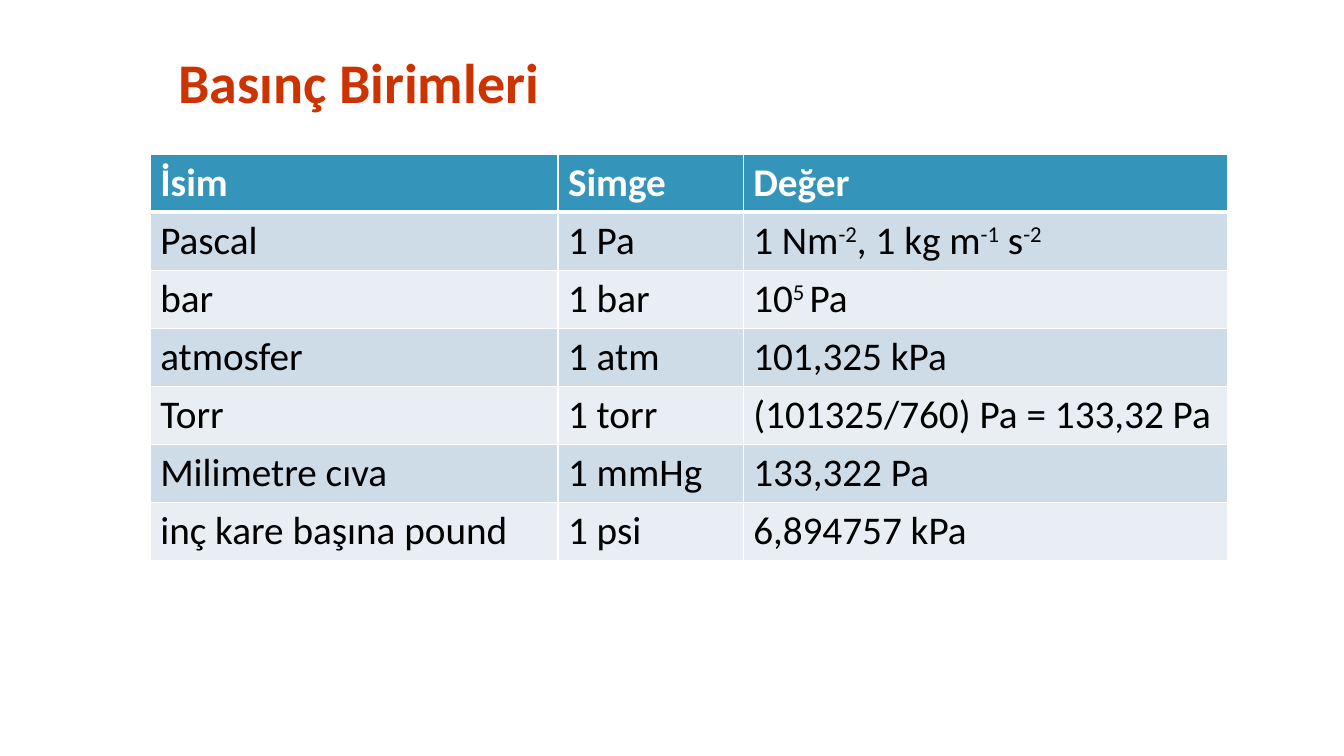
from pptx import Presentation
from pptx.dml.color import RGBColor
from pptx.enum import text
from pptx.oxml import parse_xml
from pptx.oxml.ns import nsdecls
from pptx.util import Pt

TITLE = "Basınç Birimleri"
# Pieces between bars are superscript.
ROWS = [
    ("İsim", "Simge", "Değer"),
    ("Pascal", "1 Pa", "1 Nm|-2|, 1 kg m|-1| s|-2"),
    ("bar", "1 bar", "10|5 |Pa"),
    ("atmosfer", "1 atm", "101,325 kPa"),
    ("Torr", "1 torr", "(101325/760) Pa = 133,32 Pa"),
    ("Milimetre cıva", "1 mmHg", "133,322 Pa"),
    ("inç kare başına pound", "1 psi", "6,894757 kPa"),
]
COL_WIDTHS = (291.3, 132.3, 346)
ROW_HEIGHT = 41.4
LEFT, TOP = 107.3, 110.2
HEADER, BANDS = "3494BA", ("E8EEF3", "CEDCE7")


def color(hex_value):
    return RGBColor.from_string(hex_value)


def style(p, size, hex_value, bold):
    p.font.name = "Calibri"
    p.font.size = Pt(size)
    p.font.bold = bold
    p.font.color.rgb = color(hex_value)


def add_border(cell, side, width):
    cell._tc.get_or_add_tcPr().append(parse_xml(
        f'<a:ln{side} {nsdecls("a")} w="{Pt(width)}"><a:solidFill>'
        f'<a:srgbClr val="FFFFFF"/></a:solidFill></a:ln{side}>'))


def fill_cell(cell, row, content):
    for side in "LRTB":
        under_header = (row, side) in ((0, "B"), (1, "T"))
        add_border(cell, side, 3 if under_header else 1)
    cell.fill.solid()
    cell.fill.fore_color.rgb = color(BANDS[row % 2] if row else HEADER)
    cell.vertical_anchor = text.MSO_ANCHOR.MIDDLE
    p = cell.text_frame.paragraphs[0]
    style(p, 28, "000000" if row else "FFFFFF", row == 0)
    for i, piece in enumerate(content.split("|")):
        r = p.add_run()
        r.text = piece
        if i % 2:
            r._r.get_or_add_rPr().set("baseline", "30000")


prs = Presentation()
prs.slide_width, prs.slide_height = Pt(960), Pt(540)
s = prs.slides.add_slide(prs.slide_layouts[6])

table = s.shapes.add_table(
    len(ROWS), len(COL_WIDTHS), Pt(LEFT), Pt(TOP),
    Pt(sum(COL_WIDTHS)), Pt(ROW_HEIGHT * len(ROWS))).table
for column, width in zip(table.columns, COL_WIDTHS):
    column.width = Pt(width)
for row, contents in enumerate(ROWS):
    table.rows[row].height = Pt(ROW_HEIGHT)
    for col, content in enumerate(contents):
        fill_cell(table.cell(row, col), row, content)

tf = s.shapes.add_textbox(Pt(120.2), Pt(7.9), Pt(627), Pt(77.8)).text_frame
tf.word_wrap = True
tf.vertical_anchor = text.MSO_ANCHOR.BOTTOM
p = tf.paragraphs[0]
p.text = TITLE
style(p, 40, "CC3300", True)

prs.save("out.pptx")
